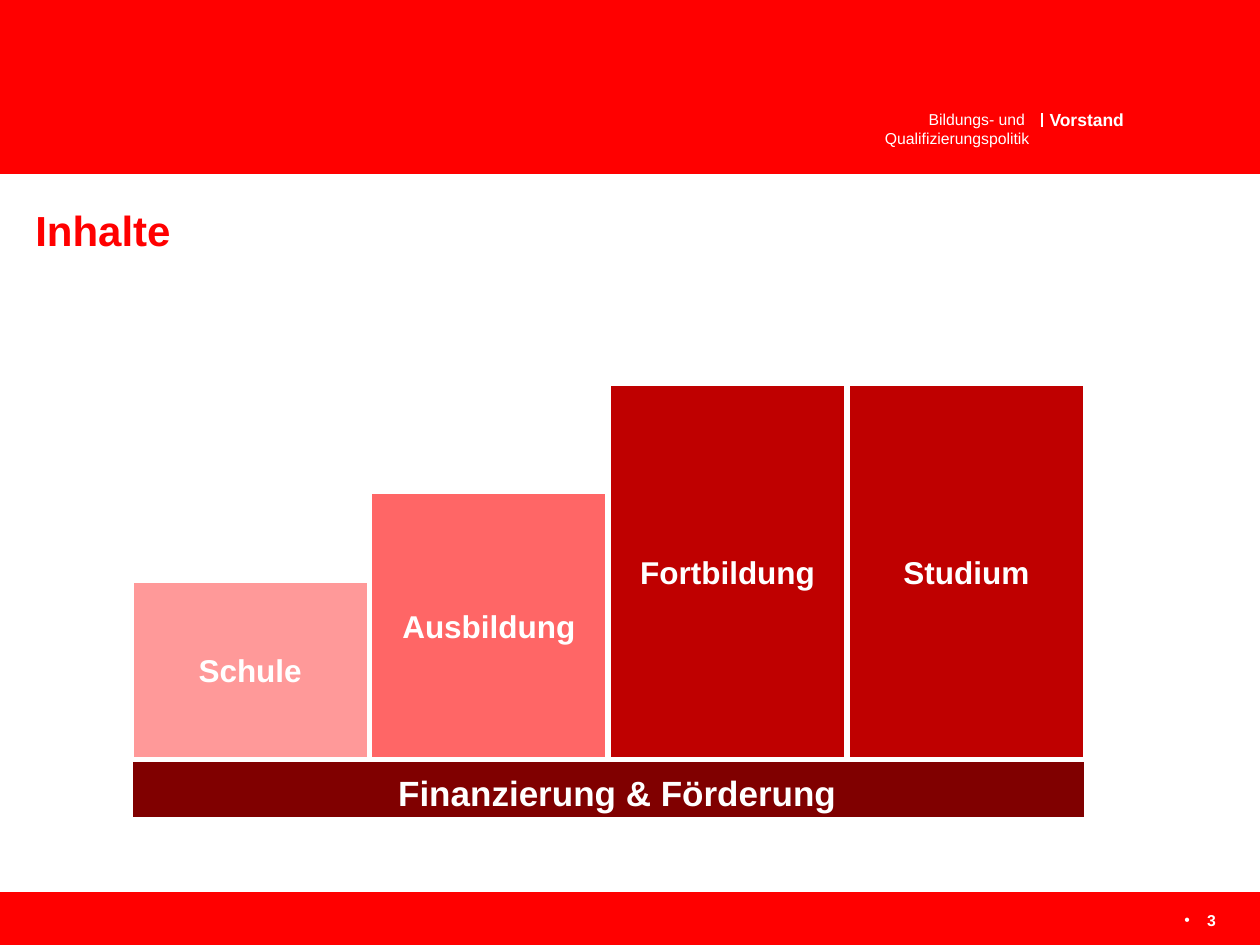
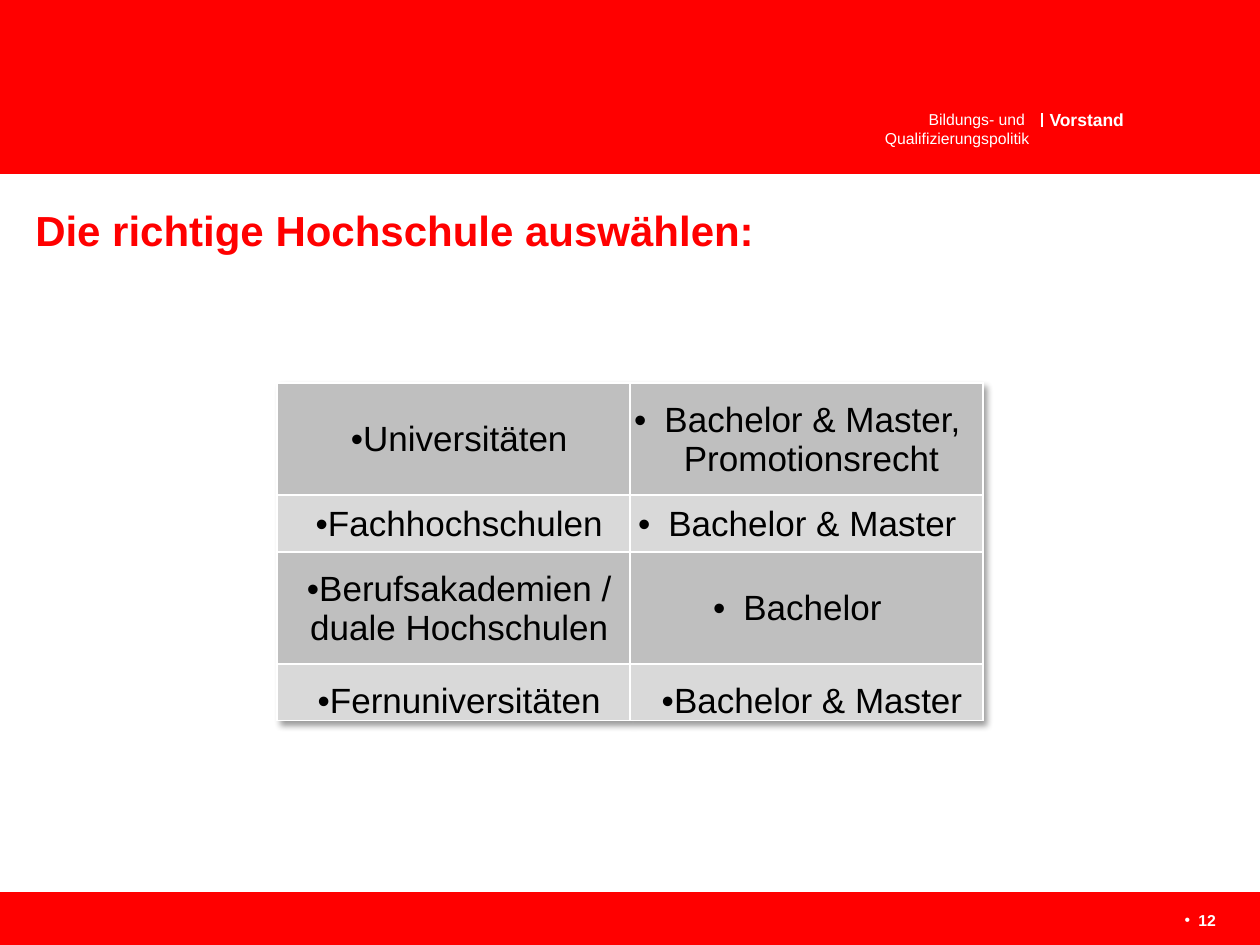
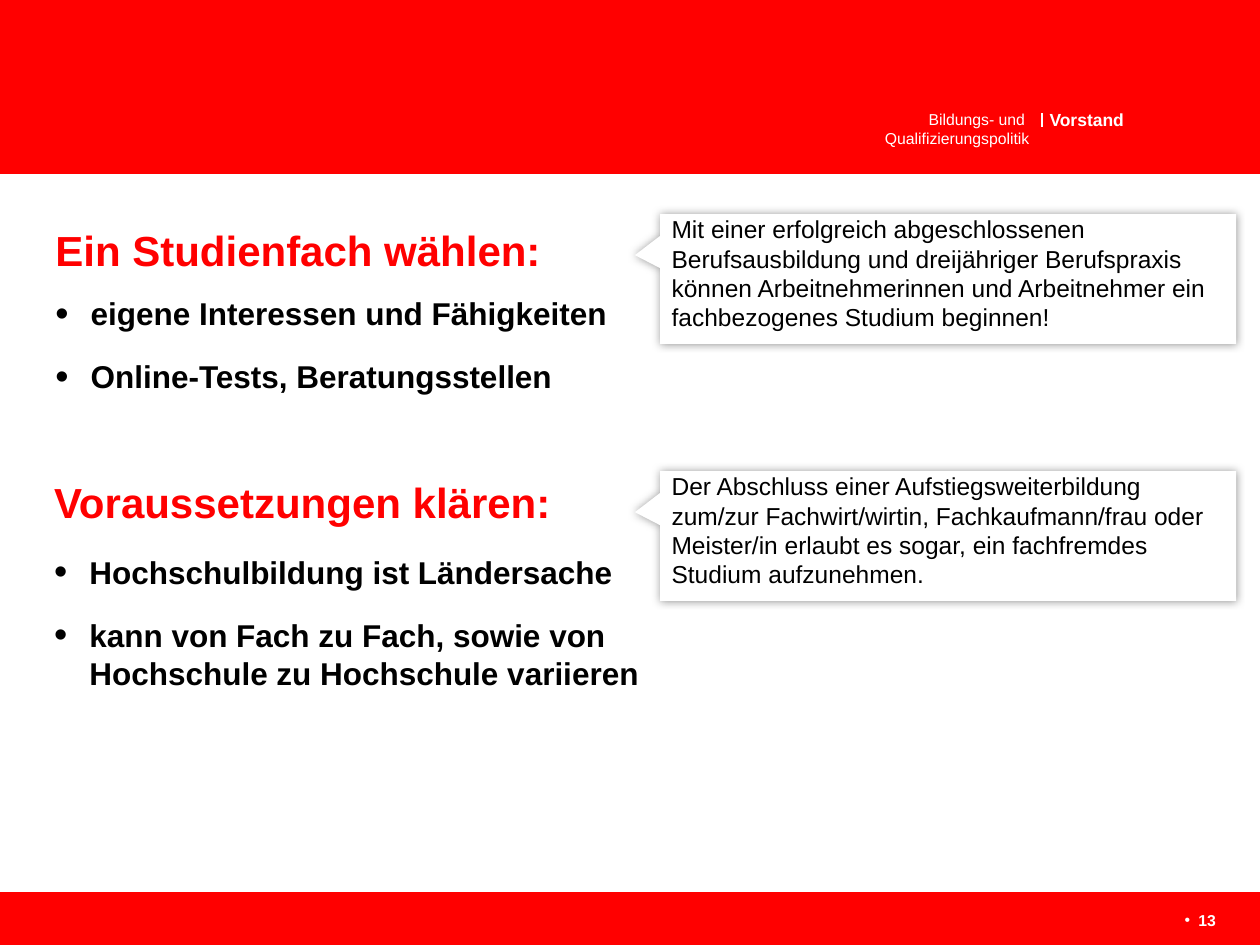
from pptx import Presentation
from pptx.dml.color import RGBColor
from pptx.enum.shapes import MSO_CONNECTOR, MSO_SHAPE
from pptx.enum.text import MSO_ANCHOR, MSO_AUTO_SIZE, PP_ALIGN
from pptx.oxml import parse_xml
from pptx.oxml.ns import nsdecls
from pptx.util import Inches, Pt

RED, WHITE, BLACK = "FF0000", "FFFFFF", "000000"
FONT = "Arial"
LEFT, CENTER, RIGHT = PP_ALIGN.LEFT, PP_ALIGN.CENTER, PP_ALIGN.RIGHT
TOP, MIDDLE, BOTTOM = MSO_ANCHOR.TOP, MSO_ANCHOR.MIDDLE, MSO_ANCHOR.BOTTOM
NAMESPACE = nsdecls("a")
SHADOW = (
    f'<a:outerShdw {NAMESPACE} blurRad="%d" dist="%d" dir="2700000" algn="tl" rotWithShape="0">'
    f'<a:srgbClr val="{BLACK}"><a:alpha val="40000"/></a:srgbClr></a:outerShdw>'
)
HEADING = dict(size=24, color=RED, bold=True, anchor=MIDDLE, line_spacing=26)
BULLETS = dict(size=18, bold=True, line_spacing=22, before=14,
               indent=(0.28, -0.28), bullet_size=120)


def write(holder, text, size, color=BLACK, bold=False, align=LEFT, anchor=TOP,
          line_spacing=None, before=0, indent=None, bullet_size=None, margins=(0, 0, 0, 0)):
    frame = holder.text_frame
    frame.word_wrap = True
    box = holder if hasattr(holder, "margin_left") else frame
    box.vertical_anchor = anchor
    box.margin_left, box.margin_top, box.margin_right, box.margin_bottom = map(Inches, margins)
    lines = [text] if isinstance(text, str) else text
    for index, line in enumerate(lines):
        paragraph = frame.add_paragraph() if index else frame.paragraphs[0]
        paragraph.text = line
        paragraph.alignment = align
        if line_spacing:
            paragraph.line_spacing = Pt(line_spacing)
        paragraph.space_before = Pt(before if index else 0)
        properties = paragraph._p.get_or_add_pPr()
        if indent:
            properties.set("marL", str(Inches(indent[0])))
            properties.set("indent", str(Inches(indent[1])))
        if bullet_size:
            properties.append(parse_xml(f'<a:buSzPct {NAMESPACE} val="{bullet_size * 1000}"/>'))
            properties.append(parse_xml(f'<a:buFont {NAMESPACE} typeface="{FONT}"/>'))
            properties.append(parse_xml(f'<a:buChar {NAMESPACE} char="•"/>'))
        for run in paragraph.runs:
            run.font.name = FONT
            run.font.size = Pt(size)
            run.font.bold = bold
            run.font.color.rgb = RGBColor.from_string(color)


def add_box(slide, kind, position, fill, line_width=0):
    shape = slide.shapes.add_shape(kind, *map(Inches, position))
    shape.shadow.inherit = False
    shape.fill.solid()
    shape.fill.fore_color.rgb = RGBColor.from_string(fill)
    if line_width:
        shape.line.color.rgb = RGBColor.from_string(WHITE)
        shape.line.width = Pt(line_width)
    else:
        shape.line.fill.background()
    return shape


presentation = Presentation()
presentation.slide_width = Inches(10)
presentation.slide_height = Inches(7.5)

pages = [
    (3, "Inhalte", (0.28, 1.55, 7.87, 0.59)),
    (12, "Die richtige Hochschule auswählen:", (0.28, 1.55, 7.87, 0.59)),
    (13, "Ein Studienfach wählen:", (0.44, 1.71, 7.87, 0.59)),
]
slides = []
for number, heading, position in pages:
    slide = presentation.slides.add_slide(presentation.slide_layouts[5])
    slides.append(slide)
    add_box(slide, MSO_SHAPE.RECTANGLE, (0, 7.08, 10, 0.42), RED)
    add_box(slide, MSO_SHAPE.RECTANGLE, (0, 0, 10, 1.38), RED)

    board = slide.shapes.add_textbox(Inches(8.33), Inches(0.88), Inches(0.7), Inches(0.15))
    write(board, "Vorstand", size=10, color=WHITE, bold=True, line_spacing=11)
    divider = slide.shapes.add_connector(
        MSO_CONNECTOR.STRAIGHT, Inches(8.27), Inches(0.9), Inches(8.27), Inches(1.01))
    divider.line.color.rgb = RGBColor.from_string(WHITE)
    divider.line.width = Pt(0.8)
    divider._element.spPr.append(parse_xml(f"<a:effectLst {NAMESPACE}/>"))
    department = slide.shapes.add_textbox(Inches(6.81), Inches(0.87), Inches(1.36), Inches(0.31))
    write(department, "Bildungs- und \vQualifizierungspolitik", size=9, color=WHITE,
          align=RIGHT, line_spacing=11)

    hang = 0.25 - 0.07 * len(str(number))
    page_number = slide.shapes.add_textbox(Inches(9.25), Inches(7.21), Inches(0.4), Inches(0.17))
    write(page_number, str(number), size=9, color=WHITE, bold=True, align=RIGHT,
          line_spacing=12, indent=(hang, -hang), bullet_size=100)

    title = slide.shapes.title
    title.left, title.top, title.width, title.height = map(Inches, position)
    write(title, heading, **HEADING)
    title.text_frame.auto_size = MSO_AUTO_SIZE.NONE

contents, universities, subjects = slides

add_box(contents, MSO_SHAPE.RECTANGLE, (1.04, 6.03, 7.58, 0.47), "800000", 2.25)
stages = [
    ("Schule", 1.42, "FF9999"),
    ("Ausbildung", 2.13, "FF6666"),
    ("Fortbildung", 2.99, "BF0000"),
    ("Studium", 2.99, "BF0000"),
]
for index, (name, height, fill) in enumerate(stages):
    position = (1.04 + index * 1.895, 6.03 - height, 1.89, height)
    stage = add_box(contents, MSO_SHAPE.RECTANGLE, position, fill, 3)
    write(stage, name, size=18, color=WHITE, bold=True, align=CENTER, anchor=MIDDLE)
funding = contents.shapes.add_textbox(Inches(3.16), Inches(6.12), Inches(4.05), Inches(0.34))
write(funding, "Finanzierung & Förderung", size=20, color=WHITE, bold=True)

BESIDE, HANGING = (0.09, 0), (0.08, -0.24)
rows = [
    (0.89, "BFBFBF", MIDDLE, ("Universitäten", BESIDE),
     ("Bachelor & Master, Promotionsrecht", HANGING)),
    (0.45, "D9D9D9", MIDDLE, ("Fachhochschulen", (0, 0.09)), ("Bachelor & Master", HANGING)),
    (0.89, "BFBFBF", MIDDLE, ("Berufsakademien / duale Hochschulen", BESIDE),
     ("Bachelor", HANGING)),
    (0.45, "D9D9D9", BOTTOM, ("Fernuniversitäten", BESIDE), ("Bachelor & Master", BESIDE)),
]
table = universities.shapes.add_table(
    len(rows), 2, Inches(2.2), Inches(3.04), Inches(5.6), Inches(2.68)).table
table.first_row = False
table.horz_banding = False
table_effects = parse_xml(f"<a:effectLst {NAMESPACE}/>")
table_effects.append(parse_xml(SHADOW % (Pt(4), Pt(3))))
table._tbl.tblPr.insert(0, table_effects)
for row_index, (height, fill, anchor, *entries) in enumerate(rows):
    table.rows[row_index].height = Inches(height)
    for column_index, (text, indent) in enumerate(entries):
        cell = table.cell(row_index, column_index)
        cell.fill.solid()
        cell.fill.fore_color.rgb = RGBColor.from_string(fill)
        write(cell, text, size=20, align=CENTER, anchor=anchor, indent=indent,
              bullet_size=100, margins=(0.01, 0.01, 0.01, 0))
        for border_index, side in enumerate("LRTB"):
            cell._tc.get_or_add_tcPr().insert(border_index, parse_xml(
                f'<a:ln{side} {NAMESPACE} w="{Pt(1)}"><a:solidFill>'
                f'<a:srgbClr val="{WHITE}"/></a:solidFill></a:ln{side}>'))

requirements = subjects.shapes.add_textbox(Inches(0.43), Inches(3.71), Inches(7.87), Inches(0.59))
write(requirements, "Voraussetzungen klären:", **HEADING)
bullet_lists = [
    ((0.44, 2.33, 7.64, 0.94),
     ["eigene Interessen und Fähigkeiten", "Online-Tests, Beratungsstellen"]),
    ((0.43, 4.38, 7.64, 1.89),
     ["Hochschulbildung ist Ländersache",
      "kann von Fach zu Fach, sowie von \vHochschule zu Hochschule variieren"]),
]
for position, items in bullet_lists:
    bullet_list = subjects.shapes.add_textbox(*map(Inches, position))
    write(bullet_list, items, **BULLETS)

callouts = [
    (1.7, ["Mit einer erfolgreich abgeschlossenen",
           "Berufsausbildung und dreijähriger Berufspraxis können Arbeitnehmerinnen und "
           "Arbeitnehmer ein fachbezogenes Studium beginnen!"]),
    (3.74, ["Der Abschluss einer Aufstiegsweiterbildung",
            "zum/zur Fachwirt/wirtin, Fachkaufmann/frau oder Meister/in erlaubt es sogar, "
            "ein fachfremdes Studium aufzunehmen."]),
]
for top, lines in callouts:
    callout = add_box(subjects, MSO_SHAPE.RECTANGULAR_CALLOUT, (5.24, top, 4.57, 1.03), WHITE)
    callout.adjustments[0] = -0.544
    callout.adjustments[1] = -0.184
    callout._element.spPr.find("{*}effectLst").append(parse_xml(SHADOW % (Pt(5), 0)))
    write(callout, lines, size=14, indent=(0.09, 0))

presentation.save("out.pptx")
